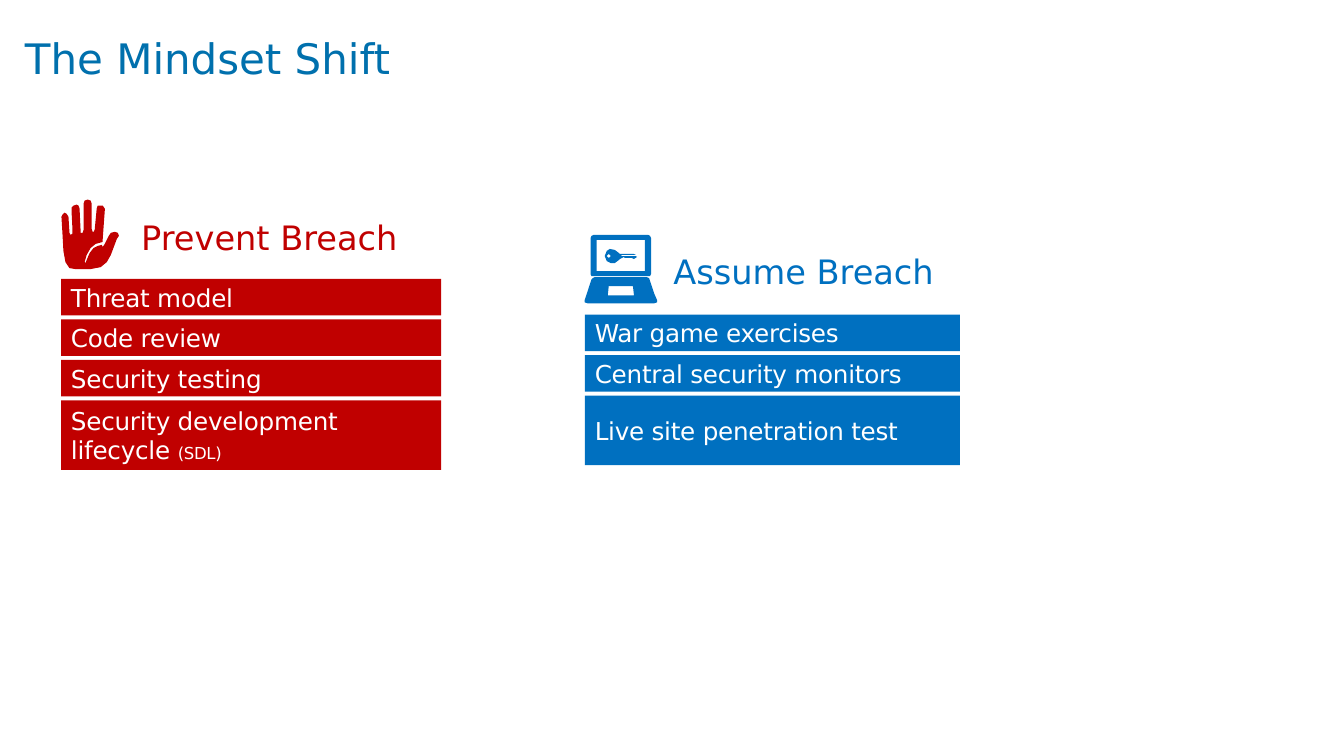
from dataclasses import dataclass

from pptx import Presentation
from pptx.dml.color import RGBColor
from pptx.enum.shapes import MSO_SHAPE
from pptx.enum.text import MSO_ANCHOR, PP_ALIGN
from pptx.util import Cm, Pt

RECTANGLE = MSO_SHAPE.RECTANGLE
MIDDLE, TOP = MSO_ANCHOR.MIDDLE, MSO_ANCHOR.TOP
LEFT = PP_ALIGN.LEFT

FONT = "DejaVu Sans"
TITLE_BLUE, BLUE, RED, WHITE = "0070AD", "0070C0", "C00000", "FFFFFF"
ROW_HEIGHT, TALL_ROW_HEIGHT, ROW_PITCH = 0.92, 1.75, 1.02
ICON_UNIT = Cm(2.54) / 100

Outline = list[tuple[float, float]]

HAND: list[Outline] = [[
    (70, 233), (71.5, 232), (72, 228), (71, 209), (71.3, 206), (73, 204),
    (76, 203), (78, 204.5), (79, 207), (80, 228), (80.5, 231), (82, 231),
    (83, 228), (83, 202), (84, 199), (87, 198), (90, 199), (91, 202),
    (91, 227), (91.5, 230), (93, 230.5), (94, 228), (96, 207), (97, 204.5),
    (99, 203.5), (102, 204.5), (103.5, 207), (103.5, 209), (102, 237),
    (101.5, 240), (95, 242), (90, 246), (86, 253), (84, 260), (85, 261),
    (86, 258), (89, 251), (93, 246), (97, 243.5), (101, 243), (102.5, 245),
    (104, 242), (108, 234), (110.5, 231), (114, 230), (117, 231), (117.5, 234),
    (116, 237), (110, 253), (106, 260), (100, 265), (90, 267), (75, 267),
    (69, 265.5), (65, 260), (63, 249), (62, 231), (61, 215), (61.5, 213),
    (64, 211), (66.5, 212), (67.5, 215), (69, 231),
]]
LAPTOP_BASE: list[Outline] = [
    [(652, 298), (652, 300), (649, 301), (583, 301), (580, 300), (580, 298),
     (587, 277), (588, 275.5), (590, 275), (642, 275), (644, 276), (649, 291)],
    [(628, 284), (604, 284), (603, 293), (629, 293)],
]
LAPTOP_SCREEN: list[Outline] = [
    [(589, 233), (643, 233), (645, 234), (645.5, 236), (645.5, 272), (645, 274),
     (643, 274.5), (589, 274.5), (587, 274), (586.5, 272), (586.5, 236), (587, 234)],
    [(592, 238), (592, 269), (640, 269), (640, 238)],
]
KEY: list[Outline] = [
    [(631, 253), (617, 253), (615.5, 253.5), (617, 254), (631, 254), (631.5, 255),
     (629, 257), (627, 255.5), (625, 256.5), (622, 256), (620, 256.5), (619, 255),
     (617, 256), (615, 257), (613.5, 258), (610, 261), (606, 261), (602, 259),
     (600, 254), (602, 249), (605, 247), (610, 247.5), (613.5, 251), (615, 251.5),
     (629, 251.5)],
    [(606, 254), (604, 252), (602, 254), (604, 256)],
]


@dataclass
class Span:
    words: str
    size: float


@dataclass
class Mindset:
    """One column: icon, heading and rows, with lengths in centimetres."""
    heading: str
    color: str
    icon: list[list[Outline]]
    heading_left: float
    heading_top: float
    heading_width: float
    left: float
    top: float
    width: float
    rows: list[list[Span]]


MINDSETS = [
    Mindset("Assume Breach", BLUE, [LAPTOP_BASE, LAPTOP_SCREEN, KEY],
            16.97, 6.45, 8.23, 14.74, 7.93, 9.45,
            [[Span("War game exercises", 17.6)],
             [Span("Central security monitors", 17.6)],
             [Span("Live site penetration test", 17.6)]]),
    Mindset("Prevent Breach", RED, [HAND],
            3.56, 5.59, 6.99, 1.54, 7.03, 9.58,
            [[Span("Threat model", 17.6)],
             [Span("Code review", 17.6)],
             [Span("Security testing", 17.6)],
             [Span("Security development lifecycle ", 17.6), Span("(SDL)", 11.8)]]),
]


def rgb(color: str) -> RGBColor:
    return RGBColor.from_string(color)


def paint(shape, color: str) -> None:
    """Give a shape a flat fill without line or shadow."""
    shape.shadow.inherit = False
    shape.fill.solid()
    shape.fill.fore_color.rgb = rgb(color)
    shape.line.fill.background()


def write(box, spans: list[Span], color: str, anchor: MSO_ANCHOR,
          side_inset: float = 0, line_spacing: float = 1, tracking: int = 0) -> None:
    """Fill a box with one paragraph; tracking is in hundredths of a point."""
    frame = box.text_frame
    frame.word_wrap = True
    frame.vertical_anchor = anchor
    frame.margin_left = frame.margin_right = Cm(side_inset)
    frame.margin_top = frame.margin_bottom = 0
    para = frame.paragraphs[0]
    para.alignment = LEFT
    para.line_spacing = line_spacing
    for span in spans:
        run = para.add_run()
        run.text = span.words
        run.font.name = FONT
        run.font.size = Pt(span.size)
        run.font.color.rgb = rgb(color)
        if tracking:
            run.font._element.set("spc", str(tracking))


def draw_outlines(group, outlines: list[Outline], color: str) -> None:
    """Draw an outer contour with any further contours as holes."""
    builder = group.shapes.build_freeform(*outlines[0][0], scale=ICON_UNIT)
    builder.add_line_segments(outlines[0][1:], close=True)
    for hole in outlines[1:]:
        builder.move_to(*hole[0])
        builder.add_line_segments(hole[1:], close=True)
    paint(builder.convert_to_shape(), color)


def draw_mindset(page, mindset: Mindset) -> None:
    group = page.shapes.add_group_shape()
    for outlines in mindset.icon:
        draw_outlines(group, outlines, mindset.color)
    heading = group.shapes.add_textbox(
        Cm(mindset.heading_left), Cm(mindset.heading_top), Cm(mindset.heading_width), Cm(0.84))
    write(heading, [Span(mindset.heading, 24)], mindset.color, TOP, line_spacing=0.9)
    last = len(mindset.rows) - 1
    for index, spans in enumerate(mindset.rows):
        height = TALL_ROW_HEIGHT if index == last else ROW_HEIGHT
        row = group.shapes.add_shape(
            RECTANGLE, Cm(mindset.left), Cm(mindset.top + index * ROW_PITCH),
            Cm(mindset.width), Cm(height))
        paint(row, mindset.color)
        write(row, spans, WHITE, MIDDLE, side_inset=0.25, tracking=-20)


def main() -> None:
    deck = Presentation()
    deck.slide_width, deck.slide_height = Cm(33.87), Cm(19.05)
    page = deck.slides.add_slide(deck.slide_layouts.get_by_name("Title Only"))
    title = page.shapes.title
    title.left, title.top, title.width, title.height = Cm(0.63), Cm(0), Cm(30.91), Cm(3.07)
    write(title, [Span("The Mindset Shift", 30)], TITLE_BLUE, MIDDLE, line_spacing=0.9)
    for mindset in MINDSETS:
        draw_mindset(page, mindset)
    deck.save("out.pptx")


if __name__ == "__main__":
    main()
